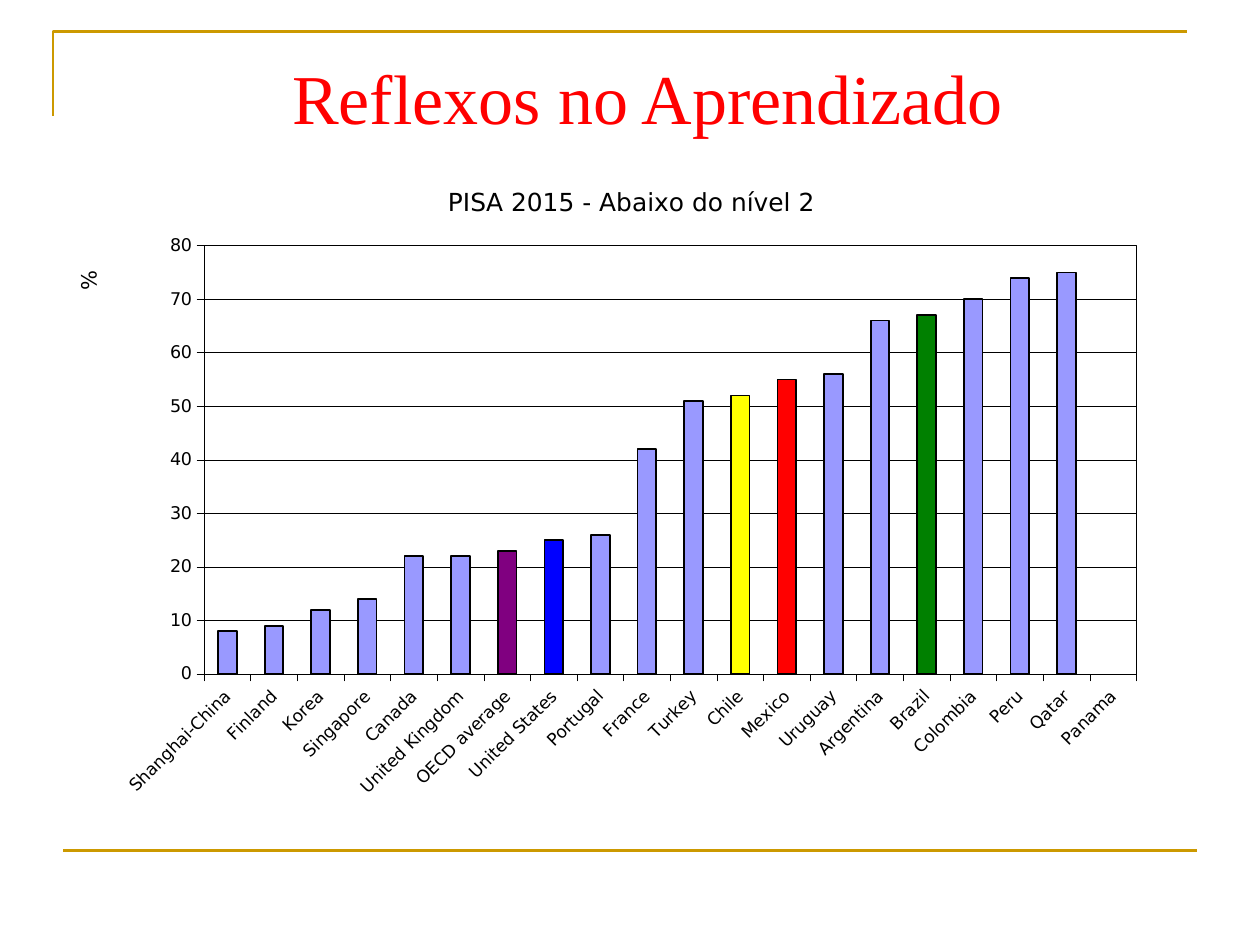
from lxml import etree
from pptx import Presentation
from pptx import util as u
from pptx.chart.data import CategoryChartData
from pptx.dml.color import RGBColor
from pptx.enum import chart as ch, shapes, text
from pptx.oxml import parse_xml
from pptx.oxml.ns import nsdecls, qn

# Content
HEADING = "Reflexos no Aprendizado"
CHART_TITLE = "PISA 2015 - Abaixo do nível 2"
AXIS_TITLE = "%"
RESULTS = [
    ("Shanghai-China", 8), ("Finland", 9), ("Korea", 12), ("Singapore", 14),
    ("Canada", 22), ("United Kingdom", 22), ("OECD average", 23),
    ("United States", 25), ("Portugal", 26), ("France", 42), ("Turkey", 51),
    ("Chile", 52), ("Mexico", 55), ("Uruguay", 56), ("Argentina", 66),
    ("Brazil", 67), ("Colombia", 70), ("Peru", 74), ("Qatar", 75),
    ("Panama", None),
]
HIGHLIGHTS = {"OECD average": "800080", "United States": "0000FF",
              "Chile": "FFFF00", "Mexico": "FF0000", "Brazil": "008000"}
GOLD, BLACK, BAR = "CC9900", "000000", "9999FF"
SANS, SERIF = "DejaVu Sans", "Times New Roman"
CHART_WIDTH, CHART_HEIGHT = 8.9, 5.37


def color(value):
    return RGBColor.from_string(value)


def set_line(line, value, width):
    line.color.rgb = color(value)
    line.width = u.Pt(width)


def set_font(font, size, name=SANS, value=BLACK):
    font.size, font.name, font.bold = u.Pt(size), name, False
    font.color.rgb = color(value)


def write(frame, words, align=text.PP_ALIGN.CENTER, **style):
    para = frame.paragraphs[0]
    para.alignment = align
    span = para.add_run()
    span.text = words
    set_font(span.font, **style)


def set_layout(parent, position, left, top, width=None, height=None):
    """Place a chart part, in inches from the chart's top left corner."""
    for old in parent.findall(qn("c:layout")):
        parent.remove(old)
    places = {"xMode": "edge", "yMode": "edge",
              "x": left / CHART_WIDTH, "y": top / CHART_HEIGHT}
    if width:
        places = {"layoutTarget": "inner", **places,
                  "w": width / CHART_WIDTH, "h": height / CHART_HEIGHT}
    layout = parse_xml(f"<c:layout {nsdecls('c')}><c:manualLayout/></c:layout>")
    for key, value in places.items():
        etree.SubElement(layout[0], qn(f"c:{key}")).set("val", str(value))
    parent.insert(position, layout)


deck = Presentation()
deck.slide_width, deck.slide_height = u.Inches(10), u.Inches(7.5)
page = deck.slides.add_slide(deck.slide_layouts[6])

# Gold frame: corner at the top, rule at the bottom
outline = page.shapes.build_freeform(u.Inches(0.42), u.Inches(0.92))
outline.add_line_segments([(u.Inches(0.42), u.Inches(0.25)),
                           (u.Inches(9.42), u.Inches(0.25))], close=False)
corner = outline.convert_to_shape()
corner.shadow.inherit = False
corner.fill.background()
set_line(corner.line, GOLD, 1.5)
rule = page.shapes.add_connector(shapes.MSO_CONNECTOR.STRAIGHT, u.Inches(0.5),
                                 u.Inches(6.75), u.Inches(9.5), u.Inches(6.75))
set_line(rule.line, GOLD, 1.5)
etree.SubElement(rule.element.spPr, qn("a:effectLst"))

# Heading
box = page.shapes.add_textbox(u.Inches(0.56), u.Inches(0.14),
                              u.Inches(9.16), u.Inches(1.25))
box.text_frame.word_wrap = True
box.text_frame.vertical_anchor = text.MSO_ANCHOR.MIDDLE
write(box.text_frame, HEADING, size=40, name=SERIF, value="FF0000")

# Column chart
data = CategoryChartData()
data.categories = [country for country, share in RESULTS]
data.add_series("Series 1", [share for country, share in RESULTS])
chart = page.shapes.add_chart(
    ch.XL_CHART_TYPE.COLUMN_CLUSTERED, u.Inches(0.55), u.Inches(1.23),
    u.Inches(CHART_WIDTH), u.Inches(CHART_HEIGHT), data).chart
set_font(chart.font, 8)
chart.has_legend = False
chart.has_title = True
write(chart.chart_title.text_frame, CHART_TITLE, size=14.2)

# Axes
cat_axis, val_axis = chart.category_axis, chart.value_axis
for axis, size in ((cat_axis, 9.8), (val_axis, 10)):
    set_font(axis.tick_labels.font, size)
    set_line(axis.format.line, BLACK, 0.25)
    axis.major_tick_mark = ch.XL_TICK_MARK.OUTSIDE
    axis.minor_tick_mark = ch.XL_TICK_MARK.NONE
cat_axis.has_major_gridlines = False
cat_axis._element.txPr.bodyPr.set("rot", "-2700000")
val_axis.minimum_scale, val_axis.maximum_scale, val_axis.major_unit = 0, 80, 10
val_axis.tick_labels.number_format = "0"
val_axis.tick_labels.number_format_is_linked = False
val_axis.has_major_gridlines = True
set_line(val_axis.major_gridlines.format.line, BLACK, 0.25)
val_axis.has_title = True
write(val_axis.axis_title.text_frame, AXIS_TITLE, size=12)
val_axis.axis_title.text_frame._txBody.bodyPr.set("rot", "-5400000")

# Bars
plot = chart.plots[0]
plot.gap_width = 150
plot.vary_by_categories = False
series = plot.series[0]
points = [(series.points[index], HIGHLIGHTS[country])
          for index, (country, share) in enumerate(RESULTS)
          if country in HIGHLIGHTS]
for bar, fill in [(series, BAR)] + points:
    bar.format.fill.solid()
    bar.format.fill.fore_color.rgb = color(fill)
    set_line(bar.format.line, BLACK, 1)

# Places of the plot area and both titles, and the plot border
area = chart._chartSpace.chart.plotArea
set_layout(area, 0, left=1.07, top=0.72, width=7.4, height=3.4)
set_layout(chart.chart_title._element, 1, left=2.97, top=0.2)
set_layout(val_axis.axis_title._element, 1, left=0.01, top=0.89)
area.append(parse_xml(
    f"<c:spPr {nsdecls('c', 'a')}><a:noFill/><a:ln w='3175'><a:solidFill>"
    f"<a:srgbClr val='{BLACK}'/></a:solidFill></a:ln></c:spPr>"))

deck.save("out.pptx")
